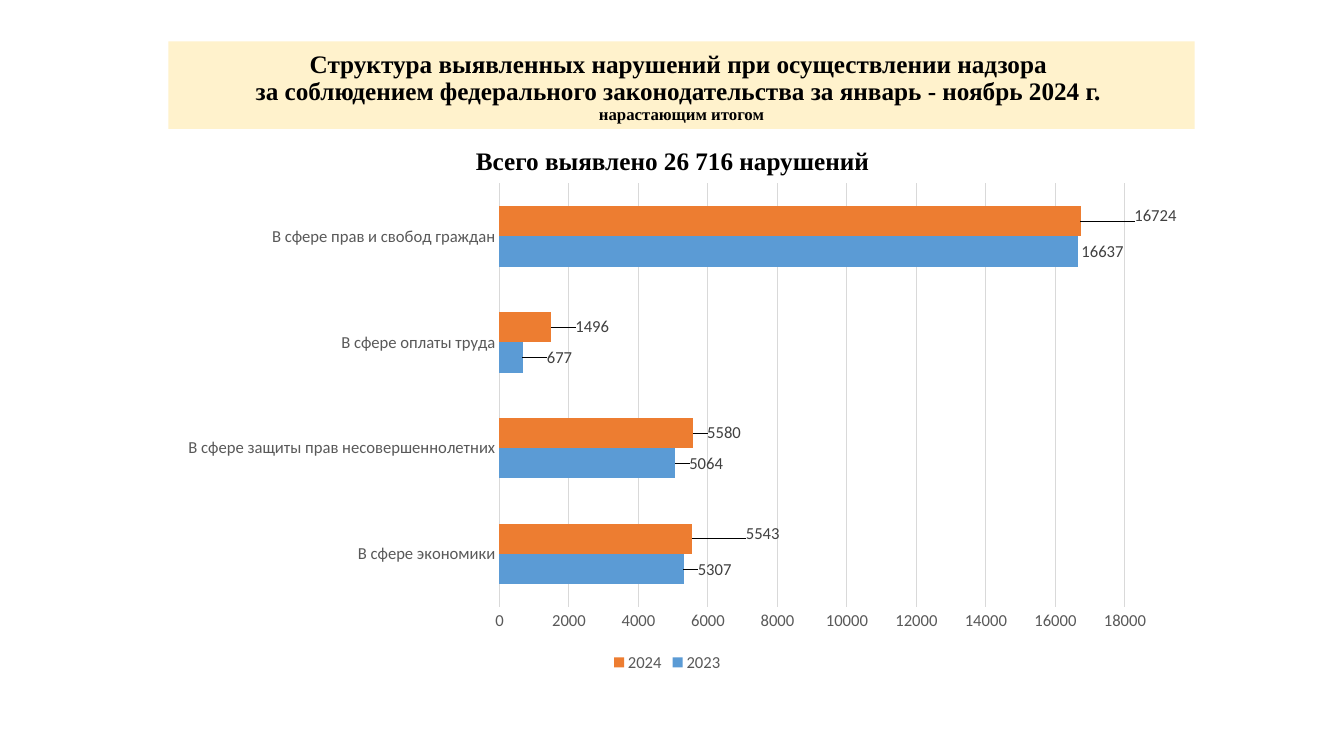
import pptx
import pptx.chart.data
import pptx.dml.color
import pptx.enum.chart
import pptx.enum.shapes
import pptx.enum.text
import pptx.oxml
import pptx.oxml.ns
import pptx.util

Inches = pptx.util.Inches
Pt = pptx.util.Pt
RGBColor = pptx.dml.color.RGBColor

BLACK = RGBColor(0x00, 0x00, 0x00)
CREAM = RGBColor(0xFF, 0xF2, 0xCC)
BLUE = RGBColor(0x5B, 0x9B, 0xD5)
ORANGE = RGBColor(0xED, 0x7D, 0x31)
GRID = RGBColor(0xD9, 0xD9, 0xD9)
AXIS_TEXT = RGBColor(0x59, 0x59, 0x59)
LABEL_TEXT = RGBColor(0x40, 0x40, 0x40)

TITLE_LINES = [
    ("Структура выявленных нарушений при осуществлении надзора ", 18),
    ("за соблюдением федерального законодательства за январь - ноябрь 2024 г. ", 18),
    ("нарастающим итогом", 12),
]
SPHERES = [
    "В сфере экономики",
    "В сфере защиты прав несовершеннолетних",
    "В сфере оплаты труда",
    "В сфере прав и свобод граждан",
]
# Year, colour, values, and label shifts (x, y) as fractions of the chart
YEARS = [
    ("2023", BLUE, (5307, 5064, 677, 16637),
     ((0.01, 0), (0.01, 0), (0.02, 0), (0, 0))),
    ("2024", ORANGE, (5543, 5580, 1496, 16724),
     ((0.05, -0.01), (0.01, 0), (0.02, 0), (0.05, -0.01))),
]


class SlideBuilder:
    heading_font = "Times New Roman"
    chart_font = "Calibri"

    def __init__(self, slide):
        self.slide = slide

    def style_font(self, font, size, color, name, bold=False):
        font.size = Pt(size)
        font.color.rgb = color
        font.name = name
        font.bold = bold

    def heading(self, sp, lines, spacing, anchor):
        """Write centred bold lines, given as (text, size), in one paragraph."""
        tf = sp.text_frame
        tf.word_wrap = True
        tf.vertical_anchor = anchor
        p = tf.paragraphs[0]
        p.alignment = pptx.enum.text.PP_ALIGN.CENTER
        p.line_spacing = spacing
        for i, (text, size) in enumerate(lines):
            if i:
                p.add_line_break()
            r = p.add_run()
            r.text = text
            self.style_font(r.font, size, BLACK, self.heading_font, True)

    def banner(self, left, top, width, height, lines):
        sp = self.slide.shapes.add_shape(
            pptx.enum.shapes.MSO_SHAPE.RECTANGLE,
            Inches(left), Inches(top), Inches(width), Inches(height))
        sp.shadow.inherit = False
        sp.fill.solid()
        sp.fill.fore_color.rgb = CREAM
        sp.line.fill.background()
        self.heading(sp, lines, 0.9, pptx.enum.text.MSO_ANCHOR.BOTTOM)

    def subtitle(self, left, top, width, height, text):
        sp = self.slide.shapes.add_textbox(
            Inches(left), Inches(top), Inches(width), Inches(height))
        self.heading(sp, [(text, 18)], 0.8, pptx.enum.text.MSO_ANCHOR.TOP)

    def bar_chart(self, left, top, width, height, categories, years):
        data = pptx.chart.data.CategoryChartData()
        data.categories = categories
        for name, _, values, _ in years:
            data.add_series(name, values)
        chart = self.slide.shapes.add_chart(
            pptx.enum.chart.XL_CHART_TYPE.BAR_CLUSTERED,
            Inches(left), Inches(top), Inches(width), Inches(height), data).chart
        chart.has_title = False
        self.style_font(chart.font, 10, BLACK, self.chart_font)
        plot = chart.plots[0]
        plot.gap_width = 150
        plot.overlap = 0
        plot.vary_by_categories = False
        for series, (_, color, _, shifts) in zip(plot.series, years):
            series.format.fill.solid()
            series.format.fill.fore_color.rgb = color
            self.value_labels(series, shifts)
        for axis in (chart.category_axis, chart.value_axis):
            self.style_axis(axis)
        chart.category_axis.has_major_gridlines = False
        line = chart.value_axis.major_gridlines.format.line
        line.color.rgb = GRID
        line.width = Pt(0.75)
        chart.has_legend = True
        chart.legend.position = pptx.enum.chart.XL_LEGEND_POSITION.BOTTOM
        chart.legend.include_in_layout = False
        self.style_font(chart.legend.font, 12, AXIS_TEXT, self.chart_font)

    def style_axis(self, axis):
        axis.major_tick_mark = pptx.enum.chart.XL_TICK_MARK.NONE
        axis.minor_tick_mark = pptx.enum.chart.XL_TICK_MARK.NONE
        axis.format.line.fill.background()
        self.style_font(axis.tick_labels.font, 12, AXIS_TEXT, self.chart_font)

    def value_labels(self, series, shifts):
        """Show values past the bar ends, each moved by its own shift."""
        outside = pptx.enum.chart.XL_LABEL_POSITION.OUTSIDE_END
        labels = series.data_labels
        labels.show_value = True
        labels.position = outside
        self.style_font(labels.font, 12, LABEL_TEXT, self.chart_font)
        for i, (dx, dy) in enumerate(shifts):
            label = series.points[i].data_label
            self.style_font(label.font, 12, LABEL_TEXT, self.chart_font)
            label.position = outside
            layout = pptx.oxml.parse_xml(
                f'<c:layout {pptx.oxml.ns.nsdecls("c")}><c:manualLayout>'
                f'<c:x val="{dx}"/><c:y val="{dy}"/>'
                '</c:manualLayout></c:layout>')
            # Layout must directly follow the index of its label
            idx = labels._element.xpath(f'c:dLbl/c:idx[@val="{i}"]')[0]
            idx.addnext(layout)


def main():
    prs = pptx.Presentation()
    prs.slide_width = Inches(13.33)
    prs.slide_height = Inches(7.5)
    s = SlideBuilder(prs.slides.add_slide(prs.slide_layouts[6]))
    s.banner(1.67, 0.41, 10.18, 0.87, TITLE_LINES)
    s.bar_chart(1.67, 1.72, 10, 4.99, SPHERES, YEARS)
    s.subtitle(1.67, 1.45, 10, 0.36, "Всего выявлено 26 716 нарушений")
    prs.save("out.pptx")


if __name__ == "__main__":
    main()
